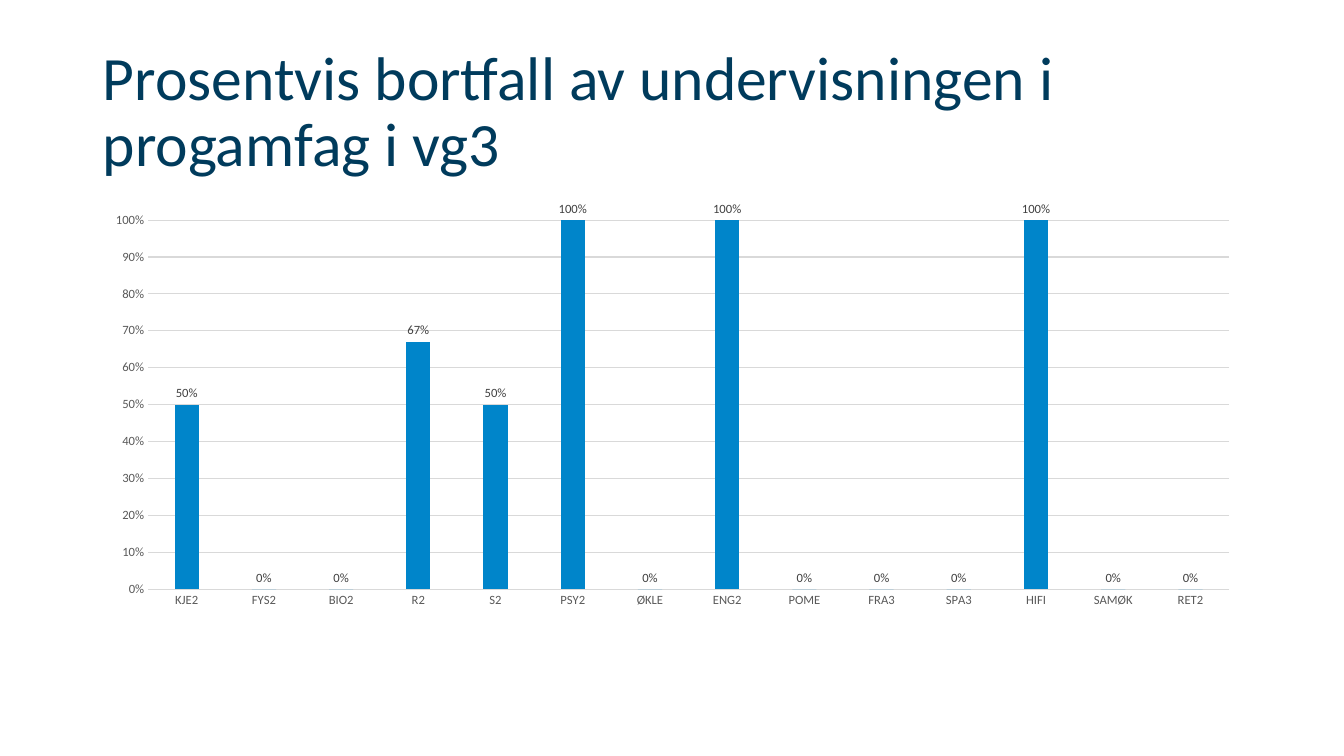
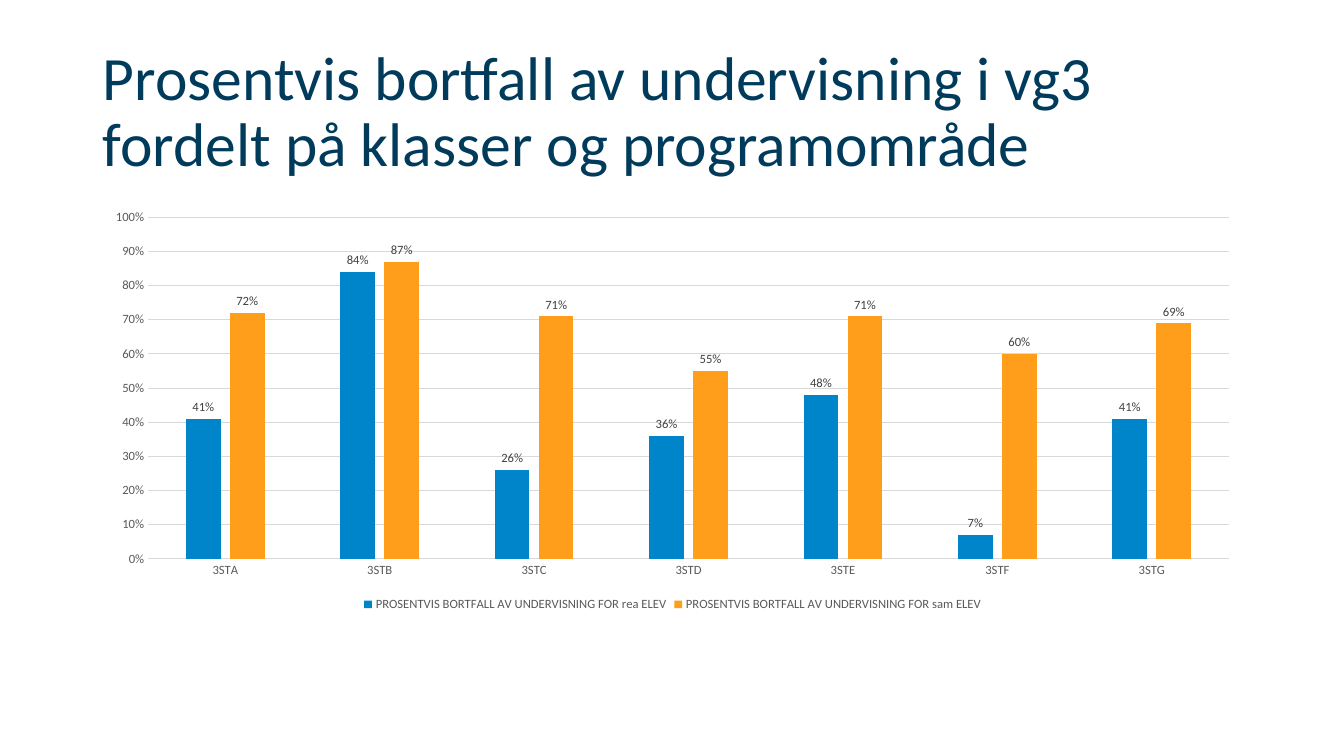
"""Build two slides with column charts of lost teaching in vg3."""
from pptx import Presentation
from pptx import util as u
from pptx.chart.data import CategoryChartData
from pptx.dml.color import RGBColor
from pptx.enum import chart as ch, text

NAVY = RGBColor(0x00, 0x3B, 0x5C)
BLUE = RGBColor(0x00, 0x85, 0xCA)
ORANGE = RGBColor(0xFF, 0x9E, 0x1B)
GRID = RGBColor(0xD9, 0xD9, 0xD9)
AXIS_TEXT = RGBColor(0x59, 0x59, 0x59)
LABEL_TEXT = RGBColor(0x40, 0x40, 0x40)
BLACK = RGBColor(0, 0, 0)
FONT = "Calibri"
PERCENT = "0%"

WIDTH, HEIGHT = u.Inches(13.33), u.Inches(7.5)
LEFT, BODY_WIDTH = u.Inches(0.92), u.Inches(11.5)
TITLE_BOX = (LEFT, u.Inches(0.4), BODY_WIDTH, u.Inches(1.45))
CHART_BOX = (LEFT, u.Inches(2), BODY_WIDTH, u.Inches(4.11))

SLIDES = [
    {
        "title": "Prosentvis bortfall av undervisningen i progamfag i vg3",
        "categories": ["KJE2", "FYS2", "BIO2", "R2", "S2", "PSY2", "ØKLE",
                       "ENG2", "POME", "FRA3", "SPA3", "HIFI", "SAMØK", "RET2"],
        "series": [
            ("Series 1", BLUE, [0.5, 0, 0, 0.67, 0.5, 1, 0, 1, 0, 0, 0, 1, 0, 0]),
        ],
    },
    {
        "title": "Prosentvis bortfall av undervisning i vg3 fordelt på klasser og programområde",
        "categories": ["3STA", "3STB", "3STC", "3STD", "3STE", "3STF", "3STG"],
        "series": [
            ("PROSENTVIS BORTFALL AV UNDERVISNING FOR rea ELEV", BLUE,
             [0.41, 0.84, 0.26, 0.36, 0.48, 0.07, 0.41]),
            ("PROSENTVIS BORTFALL AV UNDERVISNING FOR sam ELEV", ORANGE,
             [0.72, 0.87, 0.71, 0.55, 0.71, 0.6, 0.69]),
        ],
    },
]


def set_font(font, size, color):
    font.name, font.size = FONT, u.Pt(size)
    font.color.rgb = color


def set_line(line):
    line.color.rgb, line.width = GRID, u.Pt(0.75)


def add_title(s, title):
    sp = s.shapes.title
    sp.left, sp.top, sp.width, sp.height = TITLE_BOX
    tf = sp.text_frame
    tf.text = title
    tf.word_wrap = True
    tf.auto_size = text.MSO_AUTO_SIZE.NONE
    tf.vertical_anchor = text.MSO_ANCHOR.MIDDLE
    p = tf.paragraphs[0]
    p.alignment, p.line_spacing = text.PP_ALIGN.LEFT, 0.9
    set_font(p.font, 44, NAVY)


def format_axes(chart):
    cat, val = chart.category_axis, chart.value_axis
    for axis in (cat, val):
        axis.major_tick_mark = axis.minor_tick_mark = ch.XL_TICK_MARK.NONE
        set_font(axis.tick_labels.font, 9, AXIS_TEXT)
    set_line(cat.format.line)
    val.format.line.fill.background()
    val.minimum_scale, val.maximum_scale, val.major_unit = 0, 1, 0.1
    val.has_major_gridlines = True
    set_line(val.major_gridlines.format.line)
    val.tick_labels.number_format = PERCENT
    val.tick_labels.number_format_is_linked = False


def format_series(series, color):
    series.format.fill.solid()
    series.format.fill.fore_color.rgb = color
    series.invert_if_negative = False
    labels = series.data_labels
    labels.show_value = True
    labels.position = ch.XL_LABEL_POSITION.OUTSIDE_END
    labels.number_format = PERCENT
    labels.number_format_is_linked = False
    set_font(labels.font, 9, LABEL_TEXT)


def add_chart(s, categories, series):
    data = CategoryChartData(number_format=PERCENT)
    data.categories = categories
    for name, _, values in series:
        data.add_series(name, values)
    chart = s.shapes.add_chart(ch.XL_CHART_TYPE.COLUMN_CLUSTERED, *CHART_BOX, data).chart
    set_font(chart.font, 10, BLACK)
    chart.has_title = False
    format_axes(chart)
    plot = chart.plots[0]
    plot.vary_by_categories = False
    plot.gap_width, plot.overlap = 219, -27
    for item, (_, color, _) in zip(plot.series, series):
        format_series(item, color)
    chart.has_legend = len(series) > 1
    if chart.has_legend:
        chart.legend.position = ch.XL_LEGEND_POSITION.BOTTOM
        chart.legend.include_in_layout = False
        set_font(chart.legend.font, 9, AXIS_TEXT)


def main():
    prs = Presentation()
    prs.slide_width, prs.slide_height = WIDTH, HEIGHT
    for content in SLIDES:
        s = prs.slides.add_slide(prs.slide_layouts[5])
        add_title(s, content["title"])
        add_chart(s, content["categories"], content["series"])
    prs.save("out.pptx")


if __name__ == "__main__":
    main()
